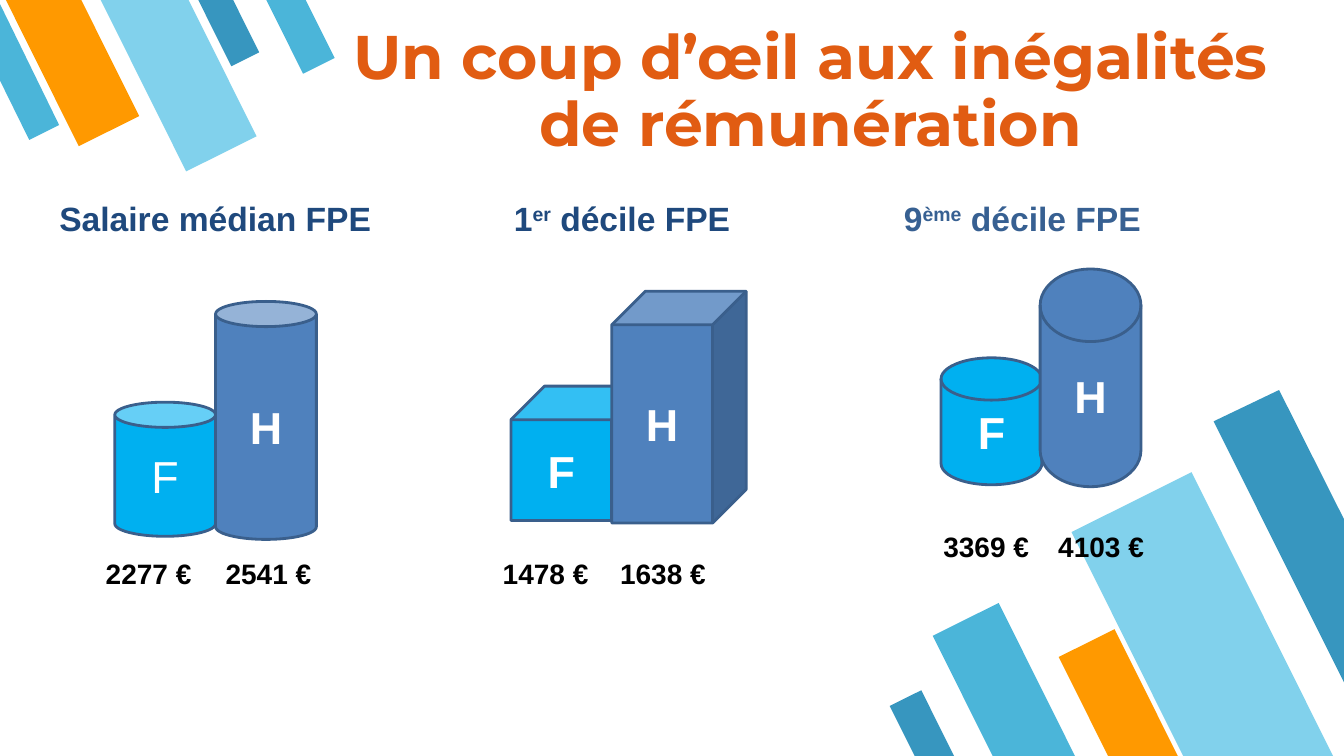
from dataclasses import dataclass

from pptx import Presentation
from pptx.dml.color import RGBColor
from pptx.enum.shapes import MSO_SHAPE
from pptx.enum.text import MSO_ANCHOR, PP_ALIGN
from pptx.oxml.ns import qn
from pptx.shapes.autoshape import Shape
from pptx.slide import Slide
from pptx.text.text import Font
from pptx.util import Pt

CAN = MSO_SHAPE.CAN
CUBE = MSO_SHAPE.CUBE
DISK = MSO_SHAPE.FLOWCHART_MAGNETIC_DISK
STRIPE = MSO_SHAPE.FLOWCHART_MANUAL_INPUT
CENTER = PP_ALIGN.CENTER
LEFT = PP_ALIGN.LEFT
MIDDLE = MSO_ANCHOR.MIDDLE


@dataclass(frozen=True)
class Theme:
    title_font: str = "Montserrat"
    body_font: str = "Arial"
    title_size: float = 44
    letter_size: float = 32
    heading_size: float = 24
    value_size: float = 20
    title: str = "E15C12"
    navy: str = "1F497D"
    slate: str = "376092"
    black: str = "000000"
    white: str = "FFFFFF"
    women: str = "00B0F0"
    men: str = "4F81BD"
    outline: str = "3A5F8C"
    teal: str = "4BB5D9"
    sky: str = "81D1EC"
    orange: str = "FF9900"
    ocean: str = "3796BF"


THEME = Theme()


@dataclass(frozen=True)
class Frame:
    left: float
    top: float
    width: float
    height: float


@dataclass(frozen=True)
class Stripe:
    frame: Frame
    rotation: float
    color: str


@dataclass(frozen=True)
class CutStripe:
    """A stripe cut off by the slide edge."""
    points: tuple[tuple[float, float], ...]
    color: str


@dataclass(frozen=True)
class Bar:
    letter: str
    frame: Frame
    color: str
    value: str
    value_left: float
    bold: bool = True


@dataclass(frozen=True)
class Comparison:
    heading: tuple[str, ...]  # the second part, if any, is superscript
    heading_frame: Frame
    heading_color: str
    solid: MSO_SHAPE
    value_top: float
    bars: tuple[Bar, Bar]


UPPER, LOWER = 333.5, 153.5
STRIPES = (
    Stripe(Frame(692.6, 435.6, 52.6, 130.3), LOWER, THEME.teal),
    Stripe(Frame(812.9, 346.3, 95.8, 235.4), LOWER, THEME.sky),
    Stripe(Frame(778.3, 453.6, 44.6, 109.4), LOWER, THEME.orange),
    Stripe(Frame(648, 495.4, 25.2, 61.9), LOWER, THEME.ocean),
    Stripe(Frame(151.2, -12.2, 22.3, 57.6), UPPER, THEME.ocean),
    Stripe(Frame(26.6, -21.6, 48.2, 121.7), UPPER, THEME.orange),
    Stripe(Frame(98.6, -23.8, 56.2, 141.1), UPPER, THEME.sky),
    Stripe(Frame(200.9, -13.7, 25.2, 64.1), UPPER, THEME.teal),
)
CUT_STRIPES = (
    CutStripe(((913.7, 278.6), (866.9, 301), (960, 487.4), (960, 370.8)), THEME.ocean),
    CutStripe(((20.9, 100), (42.2, 89.3), (0, 2.9), (0, 57.6)), THEME.teal),
)
COMPARISONS = (
    Comparison(
        ("Salaire médian FPE",), Frame(35.3, 138.2, 240, 36), THEME.navy, CAN, 393.8,
        (Bar("F", Frame(82, 287.3, 72, 95.8), THEME.women, "2277 €", 68.4, bold=False),
         Bar("H", Frame(154, 215.3, 72, 170), THEME.men, "2541 €", 154)),
    ),
    Comparison(
        ("1", "er", " décile FPE"), Frame(360, 138.2, 185, 36), THEME.navy, CUBE, 393.8,
        (Bar("F", Frame(365, 275.8, 96, 96), THEME.women, "1478 €", 352),
         Bar("H", Frame(437, 208, 96, 165.6), THEME.men, "1638 €", 435.8)),
    ),
    Comparison(
        ("9", "ème", " décile FPE"), Frame(638.6, 138.2, 195, 36), THEME.slate, DISK, 374.4,
        (Bar("F", Frame(672.2, 255.6, 72, 90.7), THEME.women, "3369 €", 666.7),
         Bar("H", Frame(743, 192.2, 72, 155.5), THEME.men, "4103 €", 748.8)),
    ),
)


def place(frame: Frame) -> tuple[Pt, Pt, Pt, Pt]:
    return Pt(frame.left), Pt(frame.top), Pt(frame.width), Pt(frame.height)


def paint(shape: Shape, color: str) -> None:
    shape.shadow.inherit = False
    shape.fill.solid()
    shape.fill.fore_color.rgb = RGBColor.from_string(color)
    shape.line.fill.background()


def style_font(font: Font, name: str, size: float, color: str, bold: bool = True) -> None:
    font.name = name
    font.size = Pt(size)
    font.bold = bold
    font.color.rgb = RGBColor.from_string(color)


def add_text(page: Slide, frame: Frame, parts: tuple[str, ...], size: float, color: str,
             name: str = THEME.body_font, align: PP_ALIGN = LEFT) -> Shape:
    """Add a one-paragraph text box; a second part is raised."""
    box = page.shapes.add_textbox(*place(frame))
    box.text_frame.word_wrap = True
    para = box.text_frame.paragraphs[0]
    para.alignment = align
    for part in parts:
        span = para.add_run()
        span.text = part
        style_font(span.font, name, size, color)
    if len(parts) > 1:
        list(box.element.iter(qn("a:rPr")))[1].set("baseline", "30000")
    return box


def add_stripe(page: Slide, stripe: Stripe) -> None:
    shape = page.shapes.add_shape(STRIPE, *place(stripe.frame))
    paint(shape, stripe.color)
    shape.rotation = stripe.rotation
    shape.element.spPr.find(qn("a:xfrm")).set("flipH", "1")


def add_cut_stripe(page: Slide, stripe: CutStripe) -> None:
    start, *others = [(Pt(x), Pt(y)) for x, y in stripe.points]
    builder = page.shapes.build_freeform(*start)
    builder.add_line_segments(others, close=True)
    paint(builder.convert_to_shape(), stripe.color)


def add_title(page: Slide) -> None:
    box = add_text(page, Frame(246.2, 21.6, 666, 90),
                   ("Un coup d’œil aux inégalités de rémunération",),
                   THEME.title_size, THEME.title, THEME.title_font, CENTER)
    frame = box.text_frame
    frame.margin_left = frame.margin_right = frame.margin_top = frame.margin_bottom = 0
    frame.vertical_anchor = MIDDLE
    frame.paragraphs[0].line_spacing = 0.9


def add_bar(page: Slide, solid: MSO_SHAPE, bar: Bar) -> None:
    shape = page.shapes.add_shape(solid, *place(bar.frame))
    paint(shape, bar.color)
    shape.line.color.rgb = RGBColor.from_string(THEME.outline)
    shape.line.width = Pt(2)
    shape.text_frame.text = bar.letter
    shape.text_frame.vertical_anchor = MIDDLE
    para = shape.text_frame.paragraphs[0]
    para.alignment = CENTER
    style_font(para.runs[0].font, THEME.body_font, THEME.letter_size, THEME.white, bar.bold)


def add_comparison(page: Slide, comparison: Comparison) -> None:
    add_text(page, comparison.heading_frame, comparison.heading,
             THEME.heading_size, comparison.heading_color)
    for bar in comparison.bars:
        add_bar(page, comparison.solid, bar)
        add_text(page, Frame(bar.value_left, comparison.value_top, 85, 31.7),
                 (bar.value,), THEME.value_size, THEME.black)


def main() -> None:
    deck = Presentation()
    deck.slide_width, deck.slide_height = Pt(960), Pt(540)
    page = deck.slides.add_slide(deck.slide_layouts[6])
    for stripe in STRIPES:
        add_stripe(page, stripe)
    for cut_stripe in CUT_STRIPES:
        add_cut_stripe(page, cut_stripe)
    add_title(page)
    for comparison in COMPARISONS:
        add_comparison(page, comparison)
    deck.save("out.pptx")


if __name__ == "__main__":
    main()
